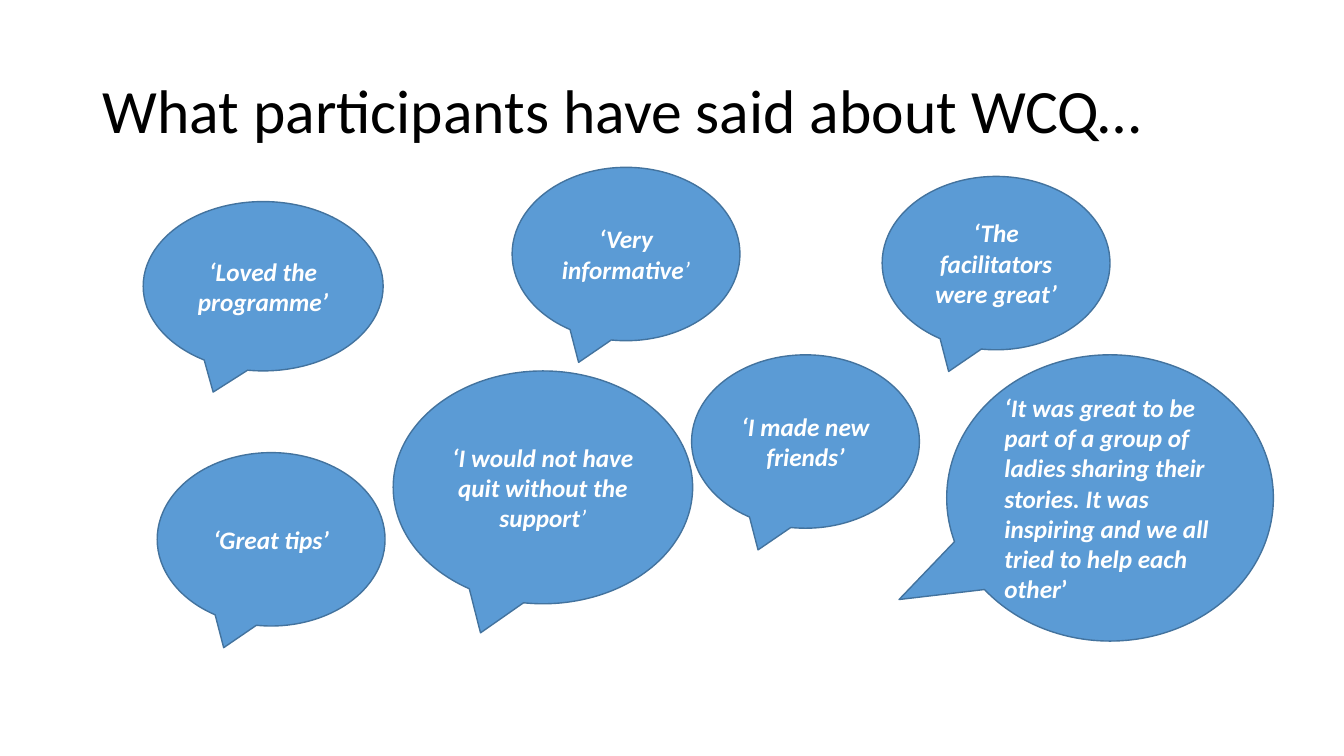
"""Build the slide of participant quotes in speech bubbles."""
from dataclasses import dataclass
from typing import Optional

from pptx import Presentation
from pptx import util as u
from pptx.dml.color import RGBColor
from pptx.enum import shapes, text

COLOURS = {"bubble": "5B9BD5", "outline": "43739E", "quote": "FFFFFF", "title": "000000"}
FONT = "Calibri"
STANDARD_SIZE = (2.26, 1.72)


@dataclass(frozen=True)
class Bubble:
    quote: str
    left: float
    top: float
    size: tuple[float, float] = STANDARD_SIZE
    closing_mark: str = ""
    mark_bold: bool = False
    mark_italic: bool = True
    tail: Optional[tuple[float, float]] = None
    alignment: text.PP_ALIGN = text.PP_ALIGN.CENTER


BUBBLES = [
    Bubble(
        "‘It was great to be part of a group of ladies sharing their stories. "
        "It was inspiring and we all tried to help each other",
        9.39, 3.52, (3.24, 2.84), "’", mark_bold=True, mark_italic=False,
        tail=(-0.646, 0.355), alignment=text.PP_ALIGN.LEFT,
    ),
    Bubble("‘Great tips’", 1.56, 4.49),
    Bubble("‘I would not have quit without the support", 3.9, 3.68, (2.97, 2.31), "’"),
    Bubble("‘The facilitators were great’", 8.75, 1.75),
    Bubble("‘I made new friends’", 6.86, 3.52),
    Bubble("‘Loved the programme’", 1.42, 2, (2.38, 1.68)),
    Bubble("‘Very informative", 5.08, 1.66, closing_mark="’"),
]


def colour(name: str) -> RGBColor:
    return RGBColor.from_string(COLOURS[name])


def format_run(run, size: float, colour_name: str, bold: bool = False, italic: bool = False) -> None:
    run.font.name = FONT
    run.font.size = u.Pt(size)
    run.font.bold = bold
    run.font.italic = italic
    run.font.color.rgb = colour(colour_name)


def add_title(slide, title: str) -> None:
    box = slide.shapes.add_textbox(u.Inches(0.92), u.Inches(0.4), u.Inches(11.5), u.Inches(1.45))
    frame = box.text_frame
    frame.word_wrap = True
    frame.vertical_anchor = text.MSO_ANCHOR.MIDDLE
    frame.text = title
    paragraph = frame.paragraphs[0]
    paragraph.line_spacing = 0.9
    format_run(paragraph.runs[0], 44, "title")


def add_bubble(slide, bubble: Bubble) -> None:
    bounds = (u.Inches(length) for length in (bubble.left, bubble.top, *bubble.size))
    shape = slide.shapes.add_shape(shapes.MSO_SHAPE.OVAL_CALLOUT, *bounds)
    shape.shadow.inherit = False
    shape.fill.solid()
    shape.fill.fore_color.rgb = colour("bubble")
    shape.line.color.rgb = colour("outline")
    shape.line.width = u.Pt(1)
    if bubble.tail:
        shape.adjustments[0], shape.adjustments[1] = bubble.tail

    frame = shape.text_frame
    frame.word_wrap = True
    frame.vertical_anchor = text.MSO_ANCHOR.MIDDLE
    frame.text = bubble.quote
    paragraph = frame.paragraphs[0]
    paragraph.alignment = bubble.alignment
    format_run(paragraph.runs[0], 18, "quote", bold=True, italic=True)
    if bubble.closing_mark:
        mark = paragraph.add_run()
        mark.text = bubble.closing_mark
        format_run(mark, 18, "quote", bubble.mark_bold, bubble.mark_italic)


def main() -> None:
    presentation = Presentation()
    presentation.slide_width = u.Inches(13.33)
    presentation.slide_height = u.Inches(7.5)
    slide = presentation.slides.add_slide(presentation.slide_layouts[6])
    add_title(slide, "What participants have said about WCQ…")
    for bubble in BUBBLES:
        add_bubble(slide, bubble)
    presentation.save("out.pptx")


if __name__ == "__main__":
    main()
